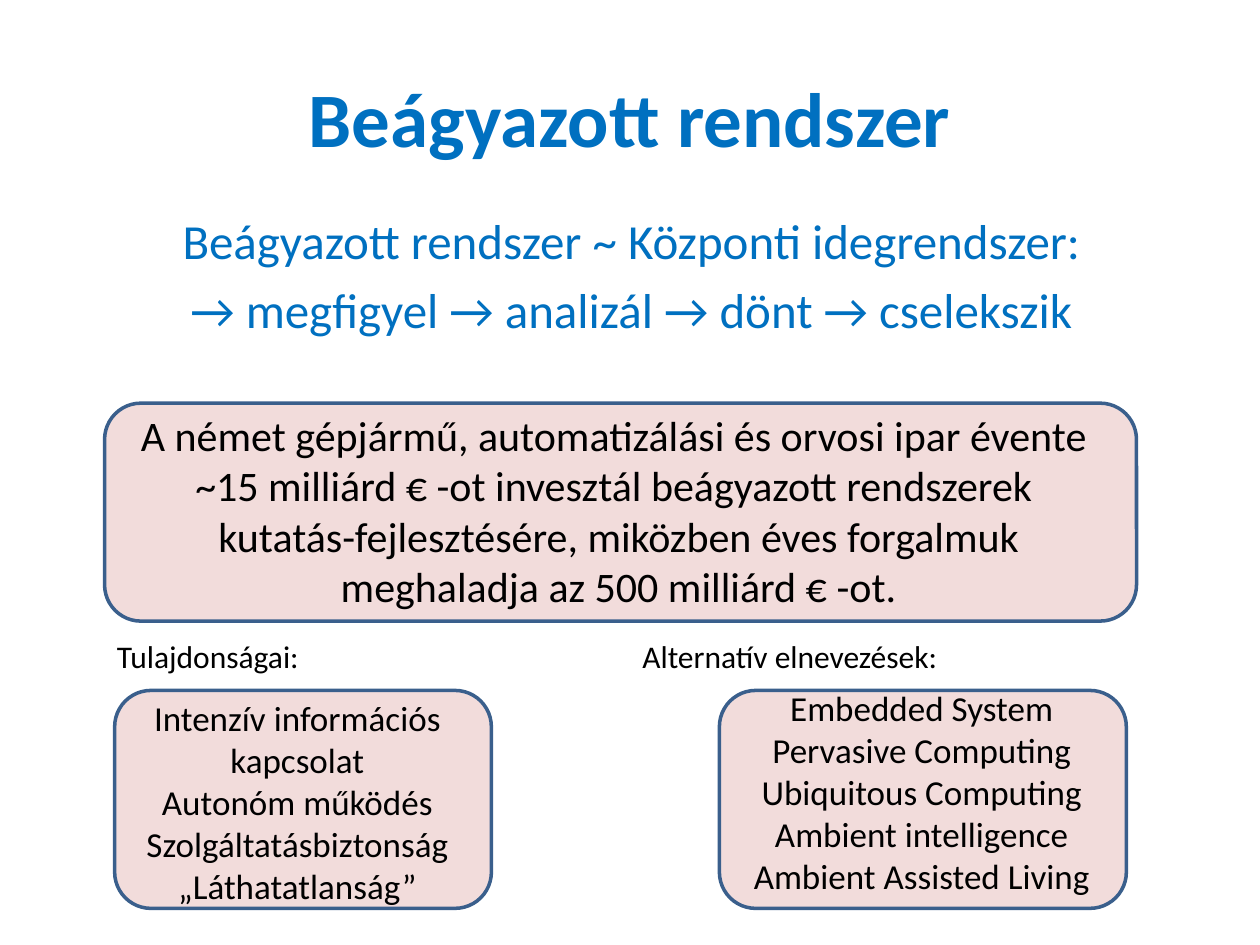
from dataclasses import dataclass

import pptx
import pptx.util
import pptx.dml.color
import pptx.enum.shapes
import pptx.enum.text
from pptx.oxml.ns import qn

Inches = pptx.util.Inches
Pt = pptx.util.Pt
RGB = pptx.dml.color.RGBColor.from_string
PP_ALIGN = pptx.enum.text.PP_ALIGN
AUTO_SIZE = pptx.enum.text.MSO_AUTO_SIZE


@dataclass(frozen=True)
class Theme:
    font: str = "Calibri"
    accent: str = "0070C0"
    ink: str = "000000"
    panel: str = "F2DCDB"
    border: str = "3A5F8C"
    title: int = 44
    lead: int = 28
    statement: int = 24
    items: int = 20
    label: int = 18


THEME = Theme()


def place(shape, box):
    for side, length in zip(("left", "top", "width", "height"), box):
        setattr(shape, side, Inches(length))


def write_lines(frame, lines, size, color, align=PP_ALIGN.CENTER, bold=False):
    style = {"name": THEME.font, "size": Pt(size), "bold": bold}
    for index, line in enumerate(lines):
        paragraph = frame.add_paragraph() if index else frame.paragraphs[0]
        paragraph.alignment = align
        run = paragraph.add_run()
        run.text = line
        for key, value in style.items():
            setattr(run.font, key, value)
        run.font.color.rgb = RGB(color)


def fill_placeholder(placeholder, box, lines, size, bold=False):
    place(placeholder, box)
    frame = placeholder.text_frame
    frame.auto_size = AUTO_SIZE.NONE
    write_lines(frame, lines, size, THEME.accent, bold=bold)


def remove_bullets(frame):
    for paragraph in frame.paragraphs:
        properties = paragraph._p.get_or_add_pPr()
        properties.append(properties.makeelement(qn("a:buNone"), {}))


def add_panel(slide, box):
    panel = slide.shapes.add_shape(
        pptx.enum.shapes.MSO_SHAPE.ROUNDED_RECTANGLE, *map(Inches, box))
    panel.shadow.inherit = False
    panel.fill.solid()
    panel.fill.fore_color.rgb = RGB(THEME.panel)
    panel.line.color.rgb = RGB(THEME.border)
    panel.line.width = Pt(2)


def add_text(slide, box, lines, size, align=PP_ALIGN.CENTER, wrap=False):
    frame = slide.shapes.add_textbox(*map(Inches, box)).text_frame
    frame.word_wrap = wrap
    frame.auto_size = AUTO_SIZE.SHAPE_TO_FIT_TEXT
    write_lines(frame, lines, size, THEME.ink, align)


def main():
    deck = pptx.Presentation()
    deck.slide_width, deck.slide_height = Inches(10), Inches(7.5)
    slide = deck.slides.add_slide(deck.slide_layouts[1])
    title, lead = slide.placeholders

    fill_placeholder(title, (0.5, 0.3, 9, 1.25), ["Beágyazott rendszer"],
                     THEME.title, bold=True)
    fill_placeholder(lead, (0.51, 1.62, 9, 1.29), [
        "Beágyazott rendszer ~ Központi idegrendszer:",
        "→ megfigyel → analizál → dönt → cselekszik",
    ], THEME.lead)
    remove_bullets(lead.text_frame)

    panel_height = 1.73
    for left, top, width in ((0.83, 3.2, 8.19), (0.91, 5.48, 2.99),
                             (5.71, 5.48, 3.23)):
        add_panel(slide, (left, top, width, panel_height))

    add_text(slide, (0.98, 3.2, 7.86, 1.72), [
        "A német gépjármű, automatizálási és orvosi ipar évente ",
        "~15 milliárd € -ot invesztál beágyazott rendszerek ",
        "kutatás-fejlesztésére, miközben éves forgalmuk",
        "meghaladja az 500 milliárd € -ot.",
    ], THEME.statement)
    add_text(slide, (0.59, 5.48, 3.54, 1.78), [
        "Intenzív információs kapcsolat",
        "Autonóm működés",
        "Szolgáltatásbiztonság",
        "„Láthatatlanság”",
    ], THEME.items, wrap=True)
    add_text(slide, (5.87, 5.4, 2.89, 1.78), [
        "Embedded System",
        "Pervasive Computing",
        "Ubiquitous Computing",
        "Ambient intelligence",
        "Ambient Assisted Living",
    ], THEME.items)

    for left, width, label in ((0.83, 1.66, "Tulajdonságai:"),
                               (5, 2.57, "Alternatív elnevezések:")):
        add_text(slide, (left, 5.01, width, 0.4), [label], THEME.label,
                 align=PP_ALIGN.LEFT)

    deck.save("out.pptx")


if __name__ == "__main__":
    main()
